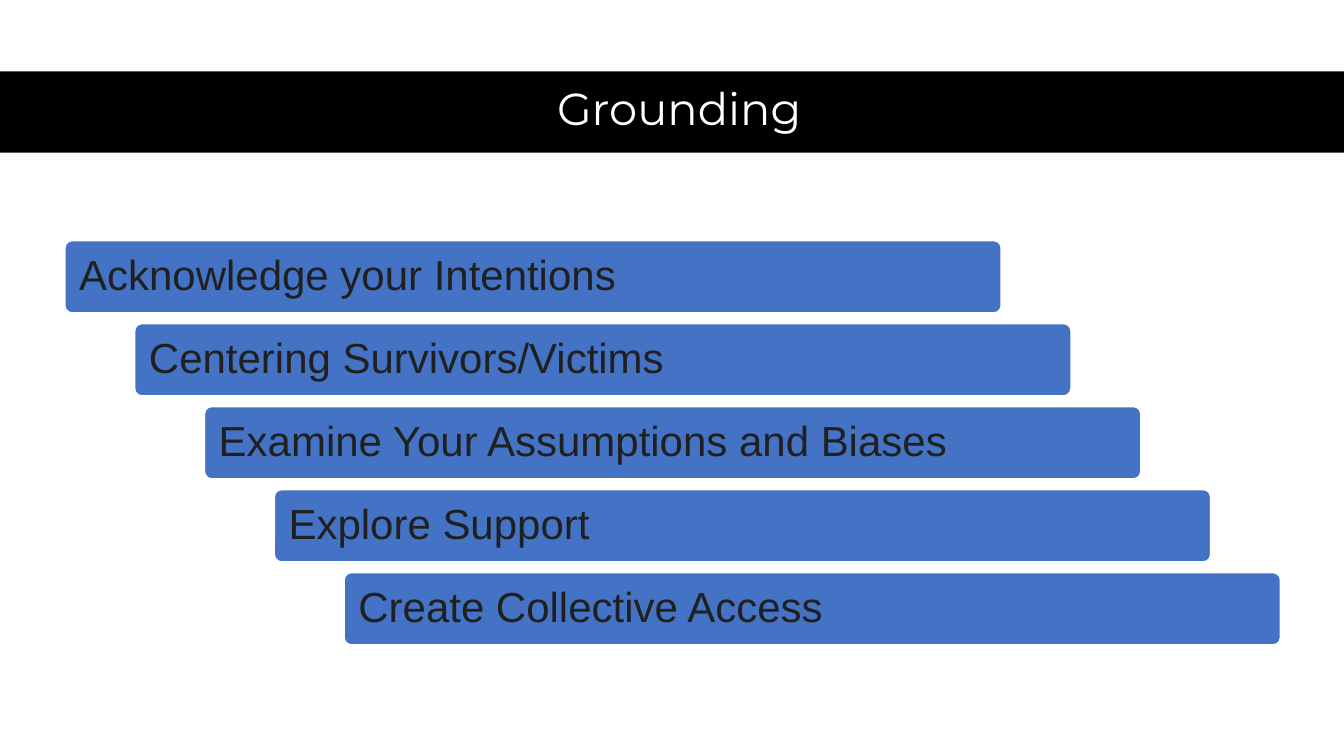
from dataclasses import dataclass

from pptx import Presentation
from pptx import util as u
from pptx.dml import color
from pptx.enum import shapes, text

COLOURS = {"white": "FFFFFF", "black": "000000", "ink": "202020", "blue": "4472C4"}
WIDTH, HEIGHT = u.Inches(13.33), u.Inches(7.5)
COL, ROW = WIDTH / 19.25, HEIGHT / 9.11
BAR_LEFT, BAR_TOP = 0.93, 2.9
BAR_INSET = u.Inches(0.12)


@dataclass(frozen=True)
class Box:
    col: float
    row: float
    cols: float
    rows: float

    def emu(self) -> tuple[int, int, int, int]:
        return (round(self.col * COL), round(self.row * ROW),
                round(self.cols * COL), round(self.rows * ROW))


BAND = Box(0, 0.86, 19.25, 0.98)
TITLE = Box(0.88, 0.85, 17.7, 0.98)
STEPS = (
    "Acknowledge your Intentions",
    "Centering Survivors/Victims",
    "Examine Your Assumptions and Biases",
    "Explore Support",
    "Create Collective Access",
)


def rgb(name: str) -> color.RGBColor:
    return color.RGBColor.from_string(COLOURS[name])


def add_block(s, kind, box: Box, fill: str, line: str | None = None):
    sp = s.shapes.add_shape(kind, *box.emu())
    sp.shadow.inherit = False
    sp.fill.solid()
    sp.fill.fore_color.rgb = rgb(fill)
    if line:
        sp.line.color.rgb = rgb(line)
        sp.line.width = u.Pt(1)
    else:
        sp.line.fill.background()
    return sp


def write(sp, words: str, *, font: str, size: float, colour: str,
          align=text.PP_ALIGN.LEFT, inset: int = u.Inches(0.1)) -> None:
    tf = sp.text_frame
    tf.word_wrap = True
    tf.vertical_anchor = text.MSO_ANCHOR.MIDDLE
    tf.margin_left = tf.margin_right = inset
    tf.margin_top = tf.margin_bottom = u.Inches(0.05)
    p = tf.paragraphs[0]
    p.alignment = align
    p.line_spacing = 0.9
    r = p.add_run()
    r.text = words
    r.font.name = font
    r.font.size = u.Pt(size)
    r.font.color.rgb = rgb(colour)


def main() -> None:
    prs = Presentation()
    prs.slide_width, prs.slide_height = WIDTH, HEIGHT
    s = prs.slides.add_slide(prs.slide_layouts[6])
    s.background.fill.solid()
    s.background.fill.fore_color.rgb = rgb("white")

    add_block(s, shapes.MSO_SHAPE.RECTANGLE, BAND, "black")
    write(s.shapes.add_textbox(*TITLE.emu()), "Grounding", font="Montserrat",
          size=32, colour="white", align=text.PP_ALIGN.CENTER)

    for i, words in enumerate(STEPS):
        box = Box(BAR_LEFT + i, BAR_TOP + i, 13.41, 0.87)
        sp = add_block(s, shapes.MSO_SHAPE.ROUNDED_RECTANGLE, box, "blue", "white")
        sp.adjustments[0] = 0.1
        write(sp, words, font="Arial", size=30, colour="ink", inset=BAR_INSET)

    prs.save("out.pptx")


if __name__ == "__main__":
    main()
